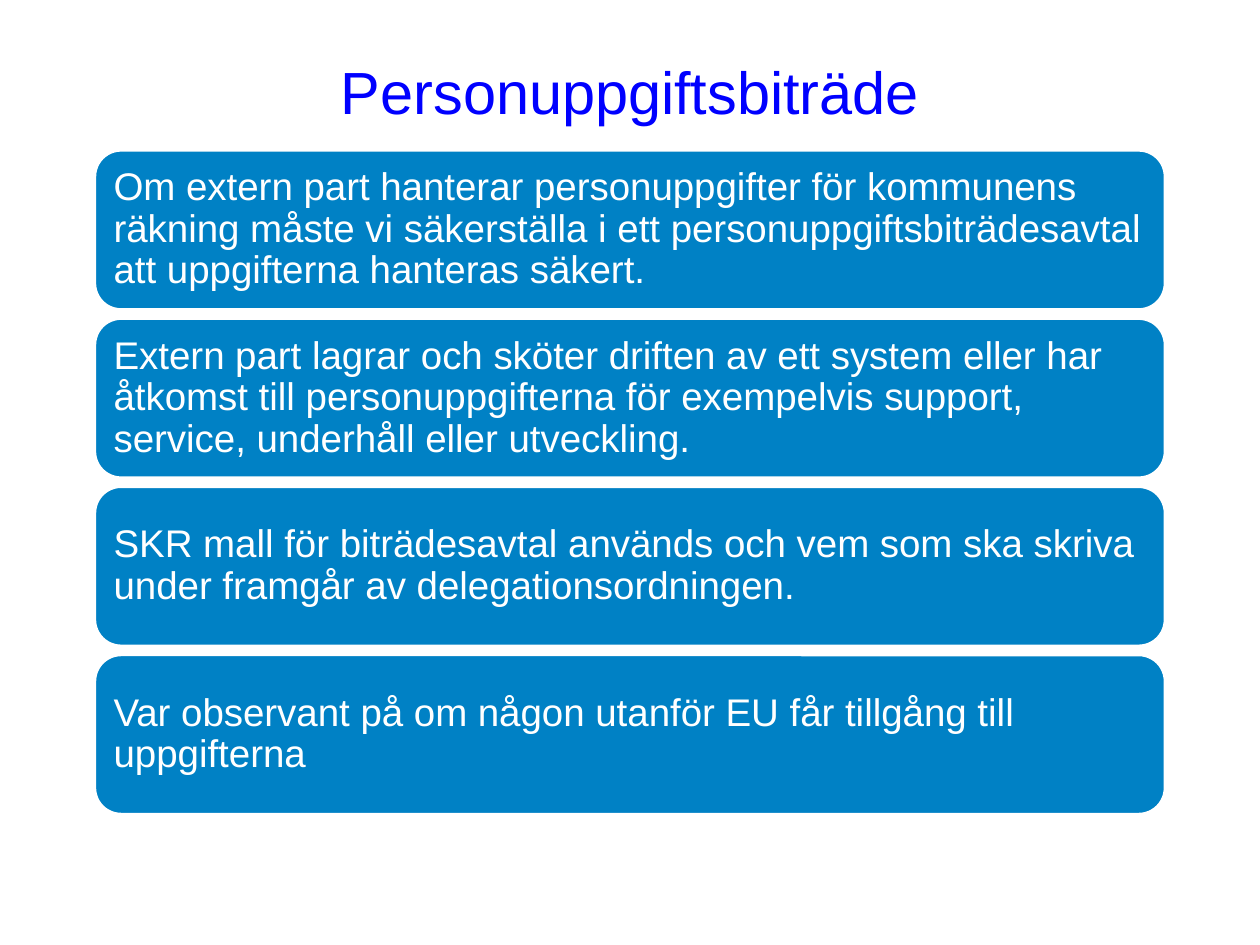
from dataclasses import dataclass

from pptx import Presentation
from pptx.dml.color import RGBColor
from pptx.enum.shapes import MSO_SHAPE
from pptx.enum.text import MSO_ANCHOR, PP_ALIGN
from pptx.slide import Slide
from pptx.text.text import TextFrame
from pptx.util import Inches, Pt

COLORS = {"title": "0000FF", "box": "0081C5", "white": "FFFFFF"}
FONT = "Arial"
LEFT, WIDTH = 0.75, 8.5
FIRST_TOP, BOX_HEIGHT, PITCH = 1.19, 1.27, 1.335


@dataclass
class Box:
    text: str
    top: float


MESSAGES = [
    "Om extern part hanterar personuppgifter för kommunens räkning måste vi "
    "säkerställa i ett personuppgiftsbiträdesavtal att uppgifterna hanteras säkert.",
    "Extern part lagrar och sköter driften av ett system eller har "
    "åtkomst till personuppgifterna för exempelvis support, service, "
    "underhåll eller utveckling.",
    "SKR mall för biträdesavtal används och vem som ska skriva under "
    "framgår av delegationsordningen.",
    "Var observant på om någon utanför EU får tillgång till uppgifterna",
]
BOXES = [Box(text, FIRST_TOP + i * PITCH) for i, text in enumerate(MESSAGES)]


def color(name: str) -> RGBColor:
    return RGBColor.from_string(COLORS[name])


def write_text(tf: TextFrame, text: str, size: int, color_name: str,
               align: PP_ALIGN, line_spacing: float) -> None:
    tf.word_wrap = True
    tf.vertical_anchor = MSO_ANCHOR.MIDDLE
    p = tf.paragraphs[0]
    p.alignment = align
    p.line_spacing = line_spacing
    r = p.add_run()
    r.text = text
    r.font.name = FONT
    r.font.size = Pt(size)
    r.font.color.rgb = color(color_name)


def add_title(s: Slide, text: str) -> None:
    title = s.shapes.title
    title.left, title.top = Inches(LEFT), Inches(0.21)
    title.width, title.height = Inches(WIDTH), Inches(1.02)
    write_text(title.text_frame, text, 34, "title", PP_ALIGN.CENTER, 1.0)


def add_box(s: Slide, box: Box) -> None:
    sp = s.shapes.add_shape(MSO_SHAPE.ROUNDED_RECTANGLE, Inches(LEFT),
                            Inches(box.top), Inches(WIDTH), Inches(BOX_HEIGHT))
    sp.shadow.inherit = False
    sp.fill.solid()
    sp.fill.fore_color.rgb = color("box")
    sp.line.color.rgb = color("white")
    sp.line.width = Pt(2)
    tf = sp.text_frame
    tf.margin_left = tf.margin_right = Inches(0.09)
    tf.margin_top = tf.margin_bottom = Inches(0.09)
    write_text(tf, box.text, 22, "white", PP_ALIGN.LEFT, 0.9)


def main() -> None:
    prs = Presentation()
    prs.slide_width, prs.slide_height = Inches(10), Inches(7.5)
    s = prs.slides.add_slide(prs.slide_layouts[5])
    add_title(s, "Personuppgiftsbiträde")
    for box in BOXES:
        add_box(s, box)
    prs.save("out.pptx")


if __name__ == "__main__":
    main()
